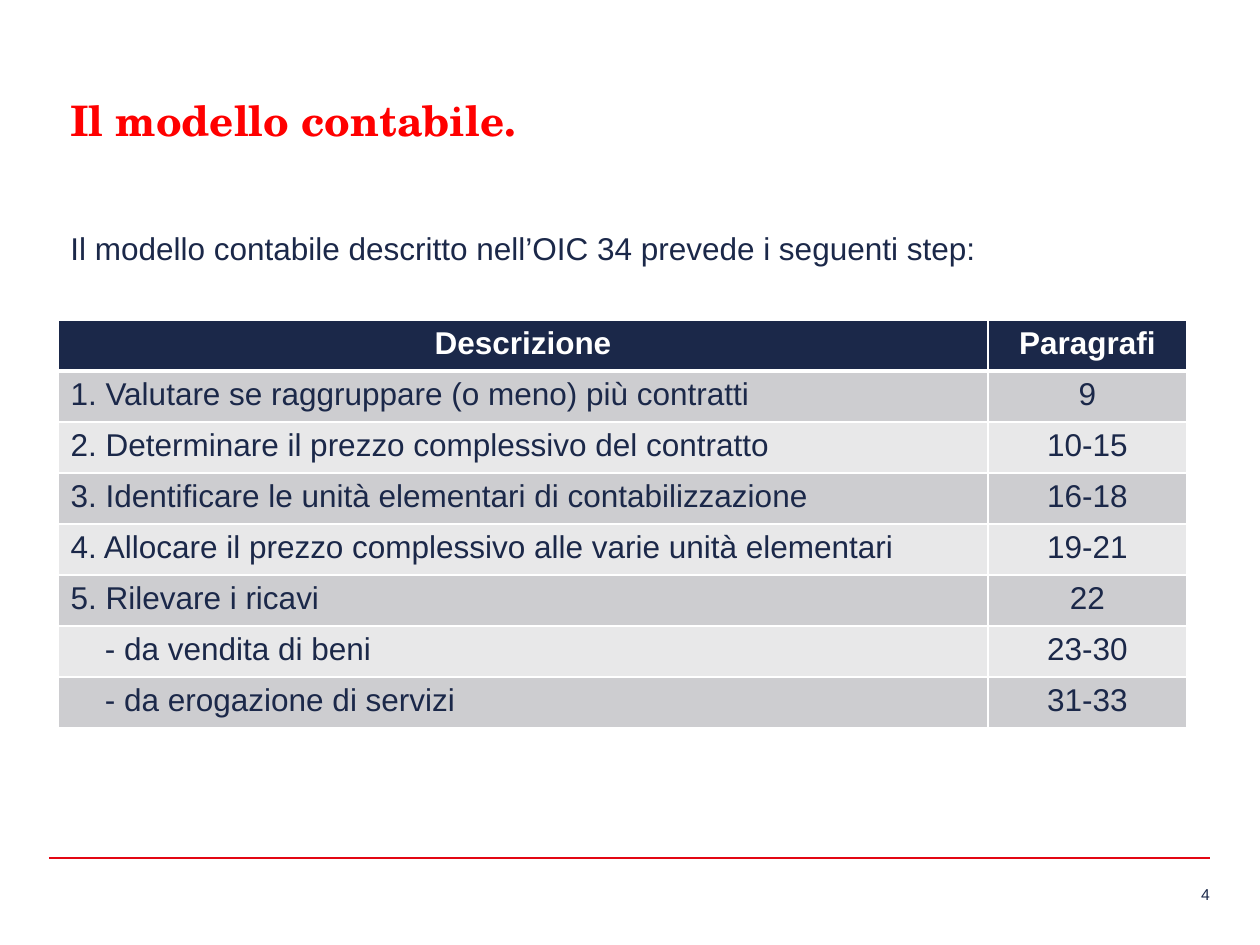
from lxml import etree
from pptx import Presentation
from pptx.dml.color import RGBColor
from pptx.enum.shapes import MSO_CONNECTOR
from pptx.enum.text import PP_ALIGN
from pptx.oxml.ns import qn
from pptx.util import Emu, Pt

PX_PER_INCH = 126
LEFT, CENTER, RIGHT = PP_ALIGN.LEFT, PP_ALIGN.CENTER, PP_ALIGN.RIGHT
JUSTIFY = PP_ALIGN.JUSTIFY
STRAIGHT = MSO_CONNECTOR.STRAIGHT

NAVY, WHITE, RED, RULE_RED = "1B2849", "FFFFFF", "FF0000", "E30613"
BANDS = ("CDCDD0", "E8E8E9")
BODY_FONT, TITLE_FONT = "Arial", "TeX Gyre Schola"

HEADER = ("Descrizione", "Paragrafi")
STEPS = [
    ("1. Valutare se raggruppare (o meno) più contratti", "9"),
    ("2. Determinare il prezzo complessivo del contratto", "10-15"),
    ("3. Identificare le unità elementari di contabilizzazione", "16-18"),
    ("4. Allocare il prezzo complessivo alle varie unità elementari", "19-21"),
    ("5. Rilevare i ricavi", "22"),
    ("- da vendita di beni", "23-30"),
    ("- da erogazione di servizi", "31-33"),
]
COLUMN_WIDTHS = (930, 199)
ROW_HEIGHT = 51
CELL_MARGIN, SUBSTEP_INDENT = 12, 35


def px(length):
    return Emu(round(length * 914400 / PX_PER_INCH))


def rgb(color):
    return RGBColor.from_string(color)


def write(text_frame, text, size, color, font=BODY_FONT, bold=False, align=LEFT):
    text_frame.text = text
    paragraph = text_frame.paragraphs[0]
    paragraph.alignment = align
    run_font = paragraph.runs[0].font
    run_font.name, run_font.size, run_font.bold = font, Pt(size), bold
    run_font.color.rgb = rgb(color)


def add_text(slide, left, top, width, height, text, size, color, **style):
    text_frame = slide.shapes.add_textbox(
        px(left), px(top), px(width), px(height)).text_frame
    text_frame.word_wrap = True
    write(text_frame, text, size, color, **style)
    return text_frame


def add_rule(slide, left, right, y, color):
    rule = slide.shapes.add_connector(STRAIGHT, px(left), px(y), px(right), px(y))
    rule.line.color.rgb = rgb(color)
    rule.line.width = Pt(1)
    etree.SubElement(rule._element.spPr, qn("a:effectLst"))


def set_borders(cell, top, bottom):
    """Draw white cell borders; top and bottom are widths in points."""
    properties = cell._tc.get_or_add_tcPr()
    for side, width in (("L", 1), ("R", 1), ("T", top), ("B", bottom)):
        border = etree.SubElement(properties, qn(f"a:ln{side}"), w=str(Pt(width)))
        fill = etree.SubElement(border, qn("a:solidFill"))
        etree.SubElement(fill, qn("a:srgbClr"), val=WHITE)


def add_steps_table(slide, left, top):
    rows = [HEADER, *STEPS]
    table = slide.shapes.add_table(
        len(rows), len(HEADER), px(left), px(top),
        px(sum(COLUMN_WIDTHS)), px(ROW_HEIGHT * len(rows))).table
    for column, width in zip(table.columns, COLUMN_WIDTHS):
        column.width = px(width)
    for row_index, values in enumerate(rows):
        table.rows[row_index].height = px(ROW_HEIGHT)
        is_header = row_index == 0
        for column_index, value in enumerate(values):
            cell = table.cell(row_index, column_index)
            set_borders(cell, top=3 if row_index == 1 else 1,
                        bottom=3 if is_header else 1)
            cell.fill.solid()
            cell.fill.fore_color.rgb = rgb(
                NAVY if is_header else BANDS[(row_index - 1) % 2])
            if value.startswith("-"):
                cell.margin_left = px(CELL_MARGIN + SUBSTEP_INDENT)
            write(cell.text_frame, value, 18, WHITE if is_header else NAVY,
                  bold=is_header,
                  align=CENTER if is_header or column_index else LEFT)


def add_page_number(slide, number):
    frame = add_text(slide, 1123, 885, 87, 19, number, 9, NAVY, align=RIGHT)
    frame.margin_left = frame.margin_right = 0
    frame.margin_top = frame.margin_bottom = 0


def main():
    presentation = Presentation()
    presentation.slide_width, presentation.slide_height = px(1260), px(945)
    slide = presentation.slides.add_slide(presentation.slide_layouts[6])
    add_page_number(slide, "4")
    add_rule(slide, 49, 1210, 858, RULE_RED)
    add_text(slide, 58, 88, 1144, 63, "Il modello contabile.", 24, RED,
             font=TITLE_FONT, bold=True)
    add_text(slide, 58, 223, 1095, 190,
             "Il modello contabile descritto nell’OIC 34 prevede i seguenti step:",
             18, NAVY, align=JUSTIFY)
    add_steps_table(slide, 58, 320)
    presentation.save("out.pptx")


if __name__ == "__main__":
    main()
